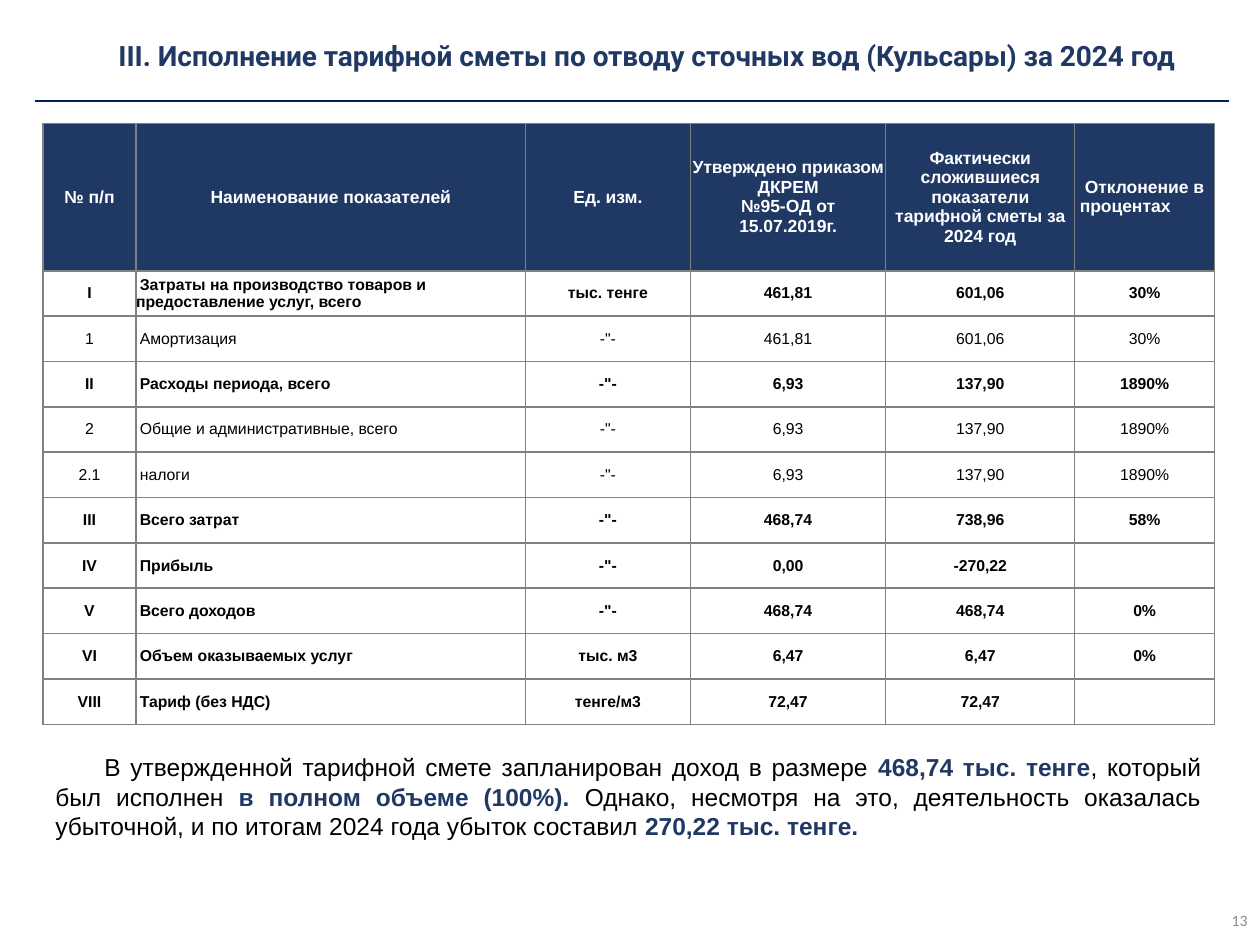
from dataclasses import dataclass

from lxml import etree
from pptx import Presentation
from pptx.dml.color import RGBColor
from pptx.enum.shapes import MSO_CONNECTOR
from pptx.enum.text import MSO_ANCHOR, MSO_AUTO_SIZE, PP_ALIGN
from pptx.oxml import parse_xml
from pptx.oxml.ns import nsdecls, qn
from pptx.util import Inches, Pt

LEFT, CENTER, RIGHT, JUSTIFY = PP_ALIGN.LEFT, PP_ALIGN.CENTER, PP_ALIGN.RIGHT, PP_ALIGN.JUSTIFY
MIDDLE, TOP = MSO_ANCHOR.MIDDLE, MSO_ANCHOR.TOP


@dataclass(frozen=True)
class Theme:
    navy: str = "203864"
    rule: str = "002060"
    border: str = "808080"
    muted: str = "8C8C8C"
    black: str = "000000"
    white: str = "FFFFFF"
    title_size: int = 16
    body_size: int = 14
    header_size: int = 10
    cell_size: int = 9
    number_size: int = 9
    title_font: str = "Roboto"
    body_font: str = "Arial"
    number_font: str = "Calibri"


theme = Theme()


def write(text_frame, text, size, color=theme.black, font=theme.body_font, bold=False,
          align=LEFT, anchor=MIDDLE, margin=0, indent=0, accent=None):
    text_frame.word_wrap = True
    text_frame.vertical_anchor = anchor
    paragraph = text_frame.paragraphs[0]
    paragraph.alignment = align
    properties = paragraph._p.get_or_add_pPr()
    properties.set("marL", str(Inches(margin)))
    properties.set("indent", str(Inches(indent)))
    for part_index, part in enumerate(text.split("**")):
        accented = part_index % 2 == 1
        for line_index, line in enumerate(part.split("\n")):
            if line_index:
                paragraph.add_line_break()
            if line:
                run = paragraph.add_run()
                run.text = line
                run.font.name = font
                run.font.size = Pt(size)
                run.font.bold = bold or accented
                run.font.color.rgb = RGBColor.from_string(accent if accented else color)


def format_cell(cell, fill=None):
    cell.margin_left = cell.margin_right = cell.margin_top = cell.margin_bottom = 0
    cell.vertical_anchor = MIDDLE
    properties = cell._tc.get_or_add_tcPr()
    for side in ("lnL", "lnR", "lnT", "lnB"):
        properties.append(parse_xml(
            f'<a:{side} {nsdecls("a")} w="{Pt(1)}"><a:solidFill>'
            f'<a:srgbClr val="{theme.border}"/></a:solidFill></a:{side}>'))
    if fill:
        cell.fill.solid()
        cell.fill.fore_color.rgb = RGBColor.from_string(fill)
    else:
        cell.fill.background()


presentation = Presentation()
presentation.slide_width = Inches(10)
presentation.slide_height = Inches(7.5)
slide = presentation.slides.add_slide(presentation.slide_layouts[5])

title = slide.shapes.title
title.left, title.top, title.width, title.height = map(Inches, (0.84, 0.14, 8.93, 0.6))
title.text_frame.auto_size = MSO_AUTO_SIZE.NONE
write(title.text_frame, "III. Исполнение тарифной сметы по отводу сточных вод (Кульсары) за 2024 год",
      theme.title_size, color=theme.navy, font=theme.title_font, bold=True)

title_rule = slide.shapes.add_connector(
    MSO_CONNECTOR.STRAIGHT, Inches(0.28), Inches(0.8), Inches(9.75), Inches(0.8))
title_rule.line.color.rgb = RGBColor.from_string(theme.rule)
title_rule.line.width = Pt(1)
etree.SubElement(title_rule._element.spPr, qn("a:effectLst"))

headers = (
    "№ п/п",
    "Наименование показателей",
    "Ед. изм.",
    "Утверждено приказом ДКРЕМ\n№95-ОД от 15.07.2019г.",
    "Фактически сложившиеся показатели тарифной сметы за\n2024 год",
    "Отклонение в процентах",
)
rows = (
    ("I", "Затраты на производство товаров и предоставление услуг, всего", "тыс. тенге",
     "461,81", "601,06", "30%"),
    ("1", "Амортизация", '-"-', "461,81", "601,06", "30%"),
    ("II", "Расходы периода, всего", '-"-', "6,93", "137,90", "1890%"),
    ("2", "Общие и административные, всего", '-"-', "6,93", "137,90", "1890%"),
    ("2.1", "налоги", '-"-', "6,93", "137,90", "1890%"),
    ("III", "Всего затрат", '-"-', "468,74", "738,96", "58%"),
    ("IV", "Прибыль", '-"-', "0,00", "-270,22", ""),
    ("V", "Всего доходов", '-"-', "468,74", "468,74", "0%"),
    ("VI", "Объем оказываемых услуг", "тыс. м3", "6,47", "6,47", "0%"),
    ("VIII", "Тариф (без НДС)", "тенге/м3", "72,47", "72,47", ""),
)
column_widths = (0.74, 3.09, 1.31, 1.55, 1.5, 1.11)
header_height, row_height = 1.17, 0.36
name_column, deviation_column = 1, 5

table = slide.shapes.add_table(
    len(rows) + 1, len(headers), Inches(0.34), Inches(0.98), Inches(sum(column_widths)),
    Inches(header_height + row_height * len(rows))).table
table.first_row = False
table.horz_banding = False
for column, width in zip(table.columns, column_widths):
    column.width = Inches(width)
for row_index, row in enumerate(table.rows):
    row.height = Inches(row_height if row_index else header_height)

for column_index, header in enumerate(headers):
    cell = table.cell(0, column_index)
    format_cell(cell, fill=theme.navy)
    hanging = column_index == deviation_column
    write(cell.text_frame, header, theme.header_size, color=theme.white, bold=True,
          align=LEFT if hanging else CENTER,
          margin=0.04 if hanging else 0, indent=0.04 if hanging else 0)

for row_index, values in enumerate(rows, start=1):
    is_total = values[0].isalpha()
    for column_index, value in enumerate(values):
        cell = table.cell(row_index, column_index)
        format_cell(cell)
        is_name = column_index == name_column
        write(cell.text_frame, value, theme.cell_size, bold=is_total,
              align=LEFT if is_name else CENTER, indent=0.03 if is_name else 0)

summary = slide.shapes.add_textbox(Inches(0.34), Inches(5.92), Inches(9.29), Inches(0.81))
write(summary.text_frame,
      "В утвержденной тарифной смете запланирован доход в размере **468,74 тыс. тенге**, "
      "который был исполнен **в полном объеме (100%). **Однако, несмотря на это, деятельность "
      "оказалась убыточной, и по итогам 2024 года убыток составил **270,22 тыс. тенге.**",
      theme.body_size, align=JUSTIFY, anchor=TOP, indent=0.39, accent=theme.navy)

page_number = slide.shapes.add_textbox(Inches(7.75), Inches(7.1), Inches(2.25), Inches(0.4))
write(page_number.text_frame, "13", theme.number_size, color=theme.muted,
      font=theme.number_font, align=RIGHT)

presentation.save("out.pptx")
